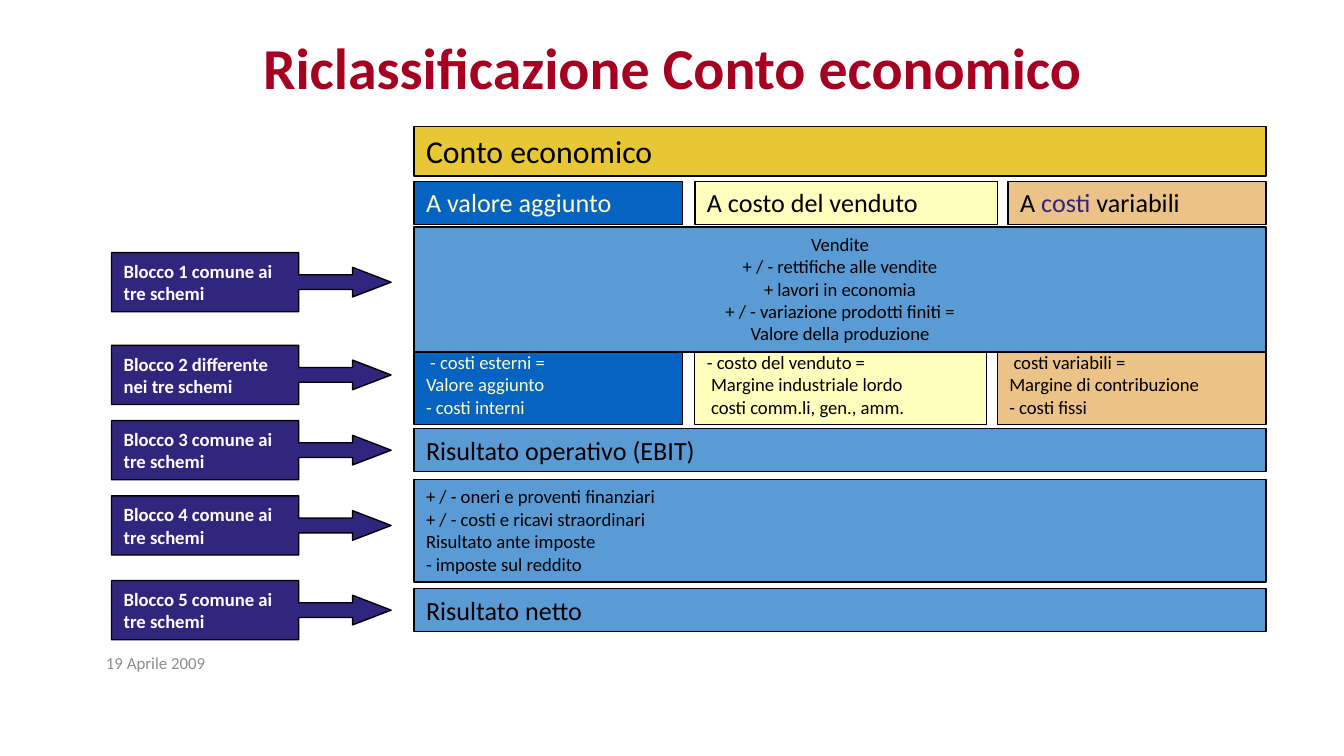
from pptx import Presentation
from pptx.dml.color import RGBColor
from pptx.enum.shapes import MSO_SHAPE as Shape
from pptx.enum.text import MSO_ANCHOR as Anchor, MSO_AUTO_SIZE as Fit, PP_ALIGN as Align
from pptx.util import Inches, Pt

WHITE = RGBColor(0xFF, 0xFF, 0xFF)
BLACK = RGBColor(0, 0, 0)
GREY = RGBColor(0x8C, 0x8C, 0x8C)
RED = RGBColor(0xA5, 0x00, 0x21)
INDIGO = RGBColor(0x31, 0x25, 0x7E)
GOLD = RGBColor(0xE8, 0xC7, 0x35)
BLUE = RGBColor(0x05, 0x63, 0xC1)
SKY = RGBColor(0x5B, 0x9B, 0xD5)
CREAM = RGBColor(0xFF, 0xFE, 0xBD)
SAND = RGBColor(0xEB, 0xC2, 0x87)

LEFT, WIDE = 3.08, 6.34

HEADS = [
    (LEFT, 2, BLUE, CREAM, [("A valore aggiunto", CREAM)]),
    (5.17, 2.25, CREAM, BLACK, [("A costo del venduto", BLACK)]),
    (7.5, 1.92, SAND, BLACK, [("A ", BLACK), ("costi", INDIGO), (" variabili", BLACK)]),
]
COSTS = [
    (LEFT, 2, BLUE, CREAM, [" - costi esterni =", "Valore aggiunto", "- costi interni"]),
    (5.17, 2.17, CREAM, BLACK,
     ["- costo del venduto =", " Margine industriale lordo", " costi comm.li, gen., amm."]),
    (7.42, 2, SAND, BLACK,
     [" costi variabili =", "Margine di contribuzione", "- costi fissi"]),
]
BANDS = [
    (3.57, 0.76, SKY, 10, Align.LEFT,
     ["+ / - oneri e proventi finanziari", "+ / - costi e ricavi straordinari",
      "Risultato ante imposte", "- imposte sul reddito"]),
    (3.19, 0.32, SKY, 14, Align.LEFT, ["Risultato operativo (EBIT)"]),
    (4.38, 0.32, SKY, 14, Align.LEFT, ["Risultato netto"]),
    (1.69, 0.93, SKY, 10, Align.CENTER,
     ["Vendite", "+ / - rettifiche alle vendite", "+ lavori in economia",
      "+ / - variazione prodotti finiti =", "Valore della produzione"]),
]
BLOCKS = [(1.88, "comune ai"), (2.57, "differente nei"), (3.13, "comune ai"),
          (3.69, "comune ai"), (4.32, "comune ai")]


def apply(item, form):
    for name, value in form.items():
        setattr(item, name, value)


def write(frame, lines, size, ink, bold=False, align=Align.LEFT):
    for i, line in enumerate(lines):
        para = frame.paragraphs[0] if i == 0 else frame.add_paragraph()
        para.alignment = align
        runs = [(line, ink)] if isinstance(line, str) else line
        for text, tone in runs:
            run = para.add_run()
            run.text = text
            apply(run.font, {"name": "Calibri", "size": Pt(size), "bold": bold})
            run.font.color.rgb = tone


def add_box(slide, kind, box, fill, form):
    shape = slide.shapes.add_shape(kind, *map(Inches, box))
    shape.shadow.inherit = False
    shape.fill.solid()
    shape.fill.fore_color.rgb = fill
    shape.line.color.rgb = BLACK
    shape.line.width = Pt(0.75)
    apply(shape.text_frame, {
        "word_wrap": True, "margin_left": Inches(0.09), "margin_right": Inches(0.09),
        "margin_top": Inches(0.04), "margin_bottom": Inches(0.04), **form})
    return shape


def add_panel(slide, box, fill, lines, size, ink=BLACK, align=Align.LEFT):
    form = {"vertical_anchor": Anchor.TOP, "auto_size": Fit.SHAPE_TO_FIT_TEXT}
    shape = add_box(slide, Shape.RECTANGLE, box, fill, form)
    write(shape.text_frame, lines, size, ink, align=align)


def add_block(slide, top, text):
    shape = add_box(slide, Shape.RIGHT_ARROW_CALLOUT, (0.83, top, 2.08, 0.44), INDIGO,
                    {"vertical_anchor": Anchor.MIDDLE})
    for i, value in enumerate((0.25, 0.25, 0.65, 0.67)):
        shape.adjustments[i] = value
    write(shape.text_frame, [text], 10, WHITE, bold=True)


def add_title(slide, text):
    title = slide.shapes.title
    apply(title, {"left": Inches(0.69), "top": Inches(0.14),
                  "width": Inches(8.62), "height": Inches(0.78)})
    title.fill.solid()
    title.fill.fore_color.rgb = WHITE
    apply(title.text_frame, {"vertical_anchor": Anchor.MIDDLE, "auto_size": Fit.NONE})
    write(title.text_frame, [text], 31, RED, bold=True, align=Align.CENTER)
    title.text_frame.paragraphs[0].line_spacing = 0.9


def add_date(slide, text):
    box = slide.shapes.add_textbox(*map(Inches, (0.69, 4.78, 2.25, 0.3)))
    apply(box.text_frame, {"word_wrap": True, "vertical_anchor": Anchor.MIDDLE})
    write(box.text_frame, [text], 9, GREY)


def main():
    deck = Presentation()
    apply(deck, {"slide_width": Inches(10), "slide_height": Inches(10) * 9 // 16})
    slide = deck.slides.add_slide(deck.slide_layouts[5])
    add_date(slide, "19 Aprile 2009")
    add_title(slide, "Riclassificazione Conto economico")
    for i, (top, scope) in enumerate(BLOCKS, 1):
        add_block(slide, top, f"Blocco {i} {scope} tre schemi")
    add_panel(slide, (LEFT, 0.94, WIDE, 0.37), GOLD, ["Conto economico"], 17)
    for left, width, fill, ink, runs in HEADS:
        add_panel(slide, (left, 1.35, width, 0.32), fill, [runs], 14, ink)
    for left, width, fill, ink, lines in COSTS:
        add_panel(slide, (left, 2.57, width, 0.59), fill, lines, 10, ink)
    for top, height, fill, size, align, lines in BANDS:
        add_panel(slide, (LEFT, top, WIDE, height), fill, lines, size, align=align)
    deck.save("out.pptx")


if __name__ == "__main__":
    main()
